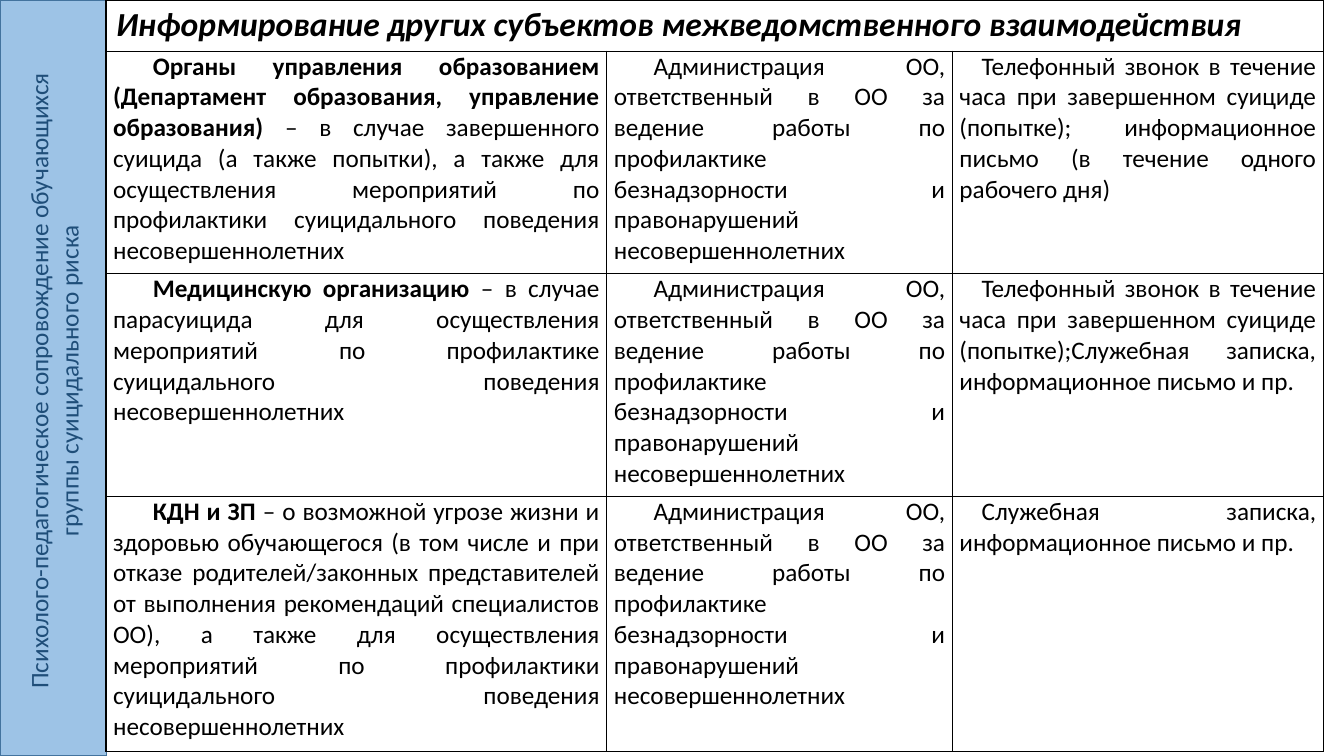
import pptx
import pptx.util
import pptx.dml.color
import pptx.enum.shapes
import pptx.enum.text
import pptx.oxml
import pptx.oxml.ns

Cm, Pt = pptx.util.Cm, pptx.util.Pt
ALIGN = pptx.enum.text.PP_ALIGN


def paint(code):
    return pptx.dml.color.RGBColor.from_string(code)


def write(para, text, size=18, color="000000", bold=False, italic=False):
    run = para.add_run()
    run.text = text
    font = run.font
    font.name, font.size = "Calibri", Pt(size)
    font.bold, font.italic = bold, italic
    font.color.rgb = paint(color)


deck = pptx.Presentation()
deck.slide_width, deck.slide_height = Cm(33.87), Cm(19.05)
slide = deck.slides.add_slide(deck.slide_layouts[6])

# Side band with vertical text
band = slide.shapes.add_shape(
    pptx.enum.shapes.MSO_SHAPE.RECTANGLE, 0, 0, Cm(2.69), Cm(19.05))
band.shadow.inherit = False
band.fill.solid()
band.fill.fore_color.rgb = paint("9DC3E6")
band.line.color.rgb = paint("43739E")
band.line.width = Pt(1)
frame = band.text_frame
frame.word_wrap = True
frame.vertical_anchor = pptx.enum.text.MSO_ANCHOR.MIDDLE
frame._txBody.bodyPr.set("vert", "vert270")
titles = ["Психолого-педагогическое сопровождение обучающихся ",
          "группы суицидального риска "]
for i, text in enumerate(titles):
    para = frame.add_paragraph() if i else frame.paragraphs[0]
    para.alignment = ALIGN.CENTER
    write(para, text, color="1F4E79")

# Table wording: bold lead, rest of the first cell, third cell
staff = ("Администрация ОО, ответственный в ОО за ведение работы по профилактике "
         "безнадзорности и правонарушений несовершеннолетних")
call = "Телефонный звонок в течение часа при завершенном суициде (попытке);"
rows = [
    ("Органы управления образованием (Департамент образования, управление образования)",
     " – в случае завершенного суицида (а также попытки), а также для осуществления "
     "мероприятий по профилактики суицидального поведения несовершеннолетних",
     call + " информационное письмо (в течение одного рабочего дня)"),
    ("Медицинскую организацию ",
     "– в случае парасуицида для осуществления мероприятий по профилактике "
     "суицидального поведения несовершеннолетних",
     call + "Служебная записка, информационное письмо и пр."),
    ("КДН и ЗП",
     " – о возможной угрозе жизни и здоровью обучающегося (в том числе и при отказе "
     "родителей/законных представителей от выполнения рекомендаций специалистов ОО), "
     "а также для осуществления мероприятий по профилактики суицидального поведения "
     "несовершеннолетних",
     "Служебная записка, информационное письмо и пр."),
]

# Table grid
widths = [12.62, 8.71, 9.35]
heights = [1.27, 5.61, 5.61, 6.43]
table = slide.shapes.add_table(
    4, 3, Cm(2.67), 0, Cm(sum(widths)), Cm(sum(heights))).table
table.first_row = table.horz_banding = False
for col, width in zip(table.columns, widths):
    col.width = Cm(width)
for row, height in zip(table.rows, heights):
    row.height = Cm(height)

# Black borders, no fill
for cell in table.iter_cells():
    props = cell._tc.get_or_add_tcPr()
    for side in "LRTB":
        props.append(pptx.oxml.parse_xml(
            f'<a:ln{side} {pptx.oxml.ns.nsdecls("a")} w="12700"><a:solidFill>'
            f'<a:srgbClr val="000000"/></a:solidFill></a:ln{side}>'))
    cell.fill.background()

# Heading row
head = table.cell(0, 0)
head.merge(table.cell(0, 2))
write(head.text_frame.paragraphs[0],
      "Информирование других субъектов межведомственного взаимодействия",
      size=24, bold=True, italic=True)

# Body rows
indents = [1, 1, 0.56]
for r, (lead, rest, notice) in enumerate(rows, 1):
    parts = [[(lead, True), (rest, False)], [(staff, False)], [(notice, False)]]
    for c, runs in enumerate(parts):
        cell = table.cell(r, c)
        cell.margin_left = cell.margin_right = Cm(0.18)
        cell.margin_top = cell.margin_bottom = 0
        para = cell.text_frame.paragraphs[0]
        para.alignment = ALIGN.JUSTIFY
        para._p.get_or_add_pPr().set("indent", str(Cm(indents[c])))
        for text, bold in runs:
            write(para, text, bold=bold)

deck.save("out.pptx")
